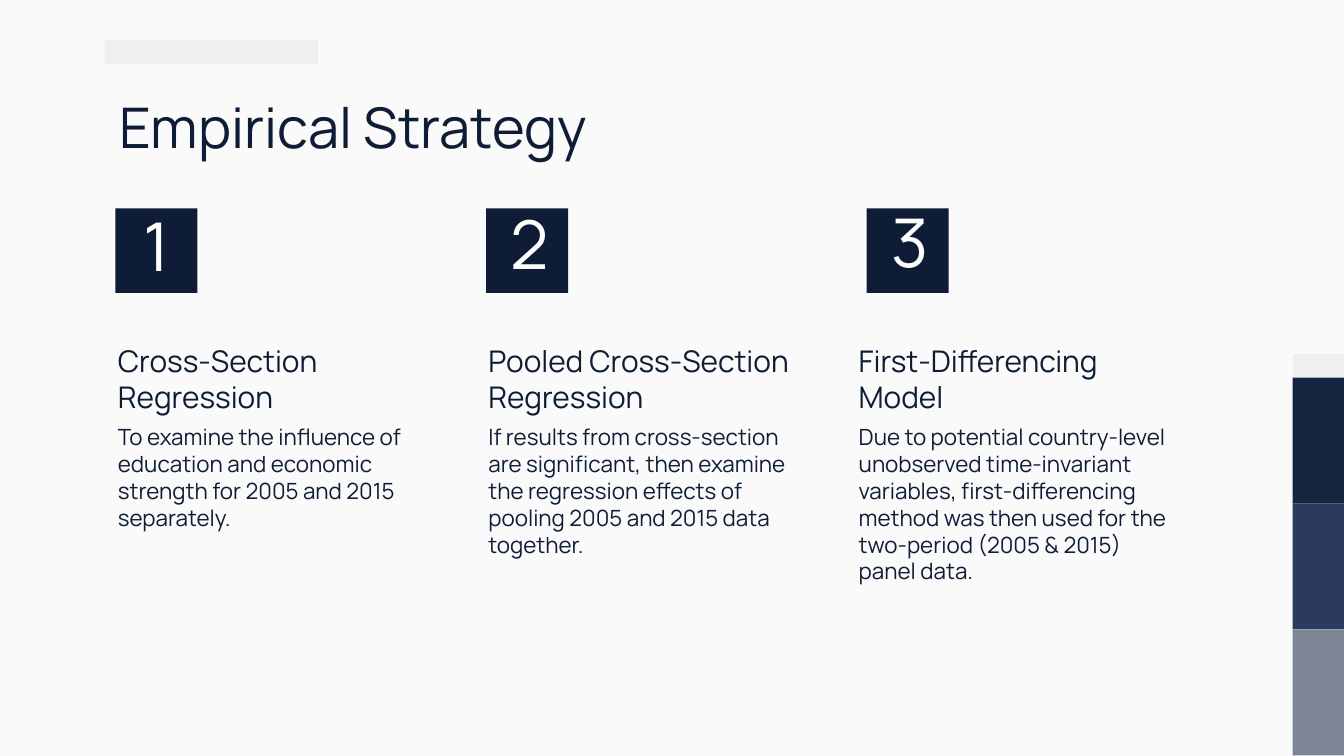
from pptx import Presentation
from pptx.dml.color import RGBColor
from pptx.enum.shapes import MSO_SHAPE
from pptx.enum.text import MSO_ANCHOR, PP_ALIGN
from pptx.util import Cm, Pt

RECTANGLE = MSO_SHAPE.RECTANGLE
TOP, MIDDLE, BOTTOM = MSO_ANCHOR.TOP, MSO_ANCHOR.MIDDLE, MSO_ANCHOR.BOTTOM
LEFT, CENTER = PP_ALIGN.LEFT, PP_ALIGN.CENTER

NAVY, PALE, WHITE, BACKGROUND = "0E1D35", "EFEFEF", "FFFFFF", "FAFAFA"
TITLE = "Empirical Strategy"
STRATEGIES = [
    {
        "heading": "Cross-Section Regression",
        "body": "To examine the influence of education and economic strength "
                "for 2005 and 2015 separately.",
        "square_left": 2.18,
        "number_top": 3.94,
    },
    {
        "heading": "Pooled Cross-Section Regression",
        "body": "If results from cross-section are significant, then examine "
                "the regression effects of pooling 2005 and 2015 data together.",
        "square_left": 9.19,
        "number_top": 3.91,
    },
    {
        "heading": "First-Differencing Model",
        "body": "Due to potential country-level unobserved time-invariant "
                "variables, first-differencing method was then used for the "
                "two-period (2005 & 2015) panel data.",
        "square_left": 16.38,
        "number_top": 3.86,
    },
]
SIDE_COLORS = ["15253F", "2B3B5D", "7C8594"]

TEXT_FORMATS = {
    "title": {"size": Pt(30), "color": NAVY, "anchor": TOP, "alignment": LEFT},
    "heading": {"size": Pt(16), "color": NAVY, "anchor": BOTTOM, "alignment": LEFT},
    "body": {"size": Pt(12), "color": NAVY, "anchor": TOP, "alignment": LEFT},
    "number": {"size": Pt(36), "color": WHITE, "anchor": MIDDLE, "alignment": CENTER},
}
FRAME_FORMAT = {
    "word_wrap": True,
    "margin_left": Cm(0.25),
    "margin_right": Cm(0.25),
    "margin_top": Cm(0.25),
    "margin_bottom": Cm(0.25),
}

COLUMN_LEFT, COLUMN_PITCH, COLUMN_WIDTH = 1.98, 7.0, 6.6
SIDE_LEFT, SIDE_TOP, SIDE_WIDTH, SIDE_HEIGHT = 24.43, 7.14, 1.02, 2.38
BAR_HEIGHT = 0.45


def color(hex_string):
    return RGBColor.from_string(hex_string)


def add_rectangle(slide, left, top, width, height, fill):
    shape = slide.shapes.add_shape(
        RECTANGLE, Cm(left), Cm(top), Cm(width), Cm(height))
    shape.shadow.inherit = False
    shape.fill.solid()
    shape.fill.fore_color.rgb = color(fill)
    shape.line.fill.background()


def add_text(slide, text, style, left, top, width, height):
    box = slide.shapes.add_textbox(Cm(left), Cm(top), Cm(width), Cm(height))
    text_format = TEXT_FORMATS[style]
    frame = box.text_frame
    for name, value in FRAME_FORMAT.items():
        setattr(frame, name, value)
    frame.vertical_anchor = text_format["anchor"]
    paragraph = frame.paragraphs[0]
    paragraph.alignment = text_format["alignment"]
    run = paragraph.add_run()
    run.text = text
    run.font.name = "Manrope"
    run.font.size = text_format["size"]
    run.font.color.rgb = color(text_format["color"])


def main():
    presentation = Presentation()
    presentation.slide_width = Cm(25.4)
    presentation.slide_height = Cm(14.29)
    slide = presentation.slides.add_slide(presentation.slide_layouts[6])
    slide.background.fill.solid()
    slide.background.fill.fore_color.rgb = color(BACKGROUND)

    add_rectangle(slide, SIDE_LEFT, SIDE_TOP - BAR_HEIGHT, SIDE_WIDTH, BAR_HEIGHT, PALE)
    for index, fill in enumerate(SIDE_COLORS):
        top = SIDE_TOP + index * SIDE_HEIGHT
        add_rectangle(slide, SIDE_LEFT, top, SIDE_WIDTH, SIDE_HEIGHT, fill)
    add_rectangle(slide, COLUMN_LEFT, 0.76, 4.03, BAR_HEIGHT, PALE)
    add_text(slide, TITLE, "title", 2.0, 1.5, 21.4, 1.6)

    for index, strategy in enumerate(STRATEGIES):
        left = COLUMN_LEFT + index * COLUMN_PITCH
        square_left = strategy["square_left"]
        add_text(slide, strategy["heading"], "heading", left, 6.12, COLUMN_WIDTH, 1.96)
        add_text(slide, strategy["body"], "body", left, 7.75, COLUMN_WIDTH, 5.05)
        add_rectangle(slide, square_left, 3.94, 1.55, 1.6, NAVY)
        add_text(slide, str(index + 1), "number",
                 square_left + 0.21, strategy["number_top"], 1.14, 1.37)

    presentation.save("out.pptx")


if __name__ == "__main__":
    main()
